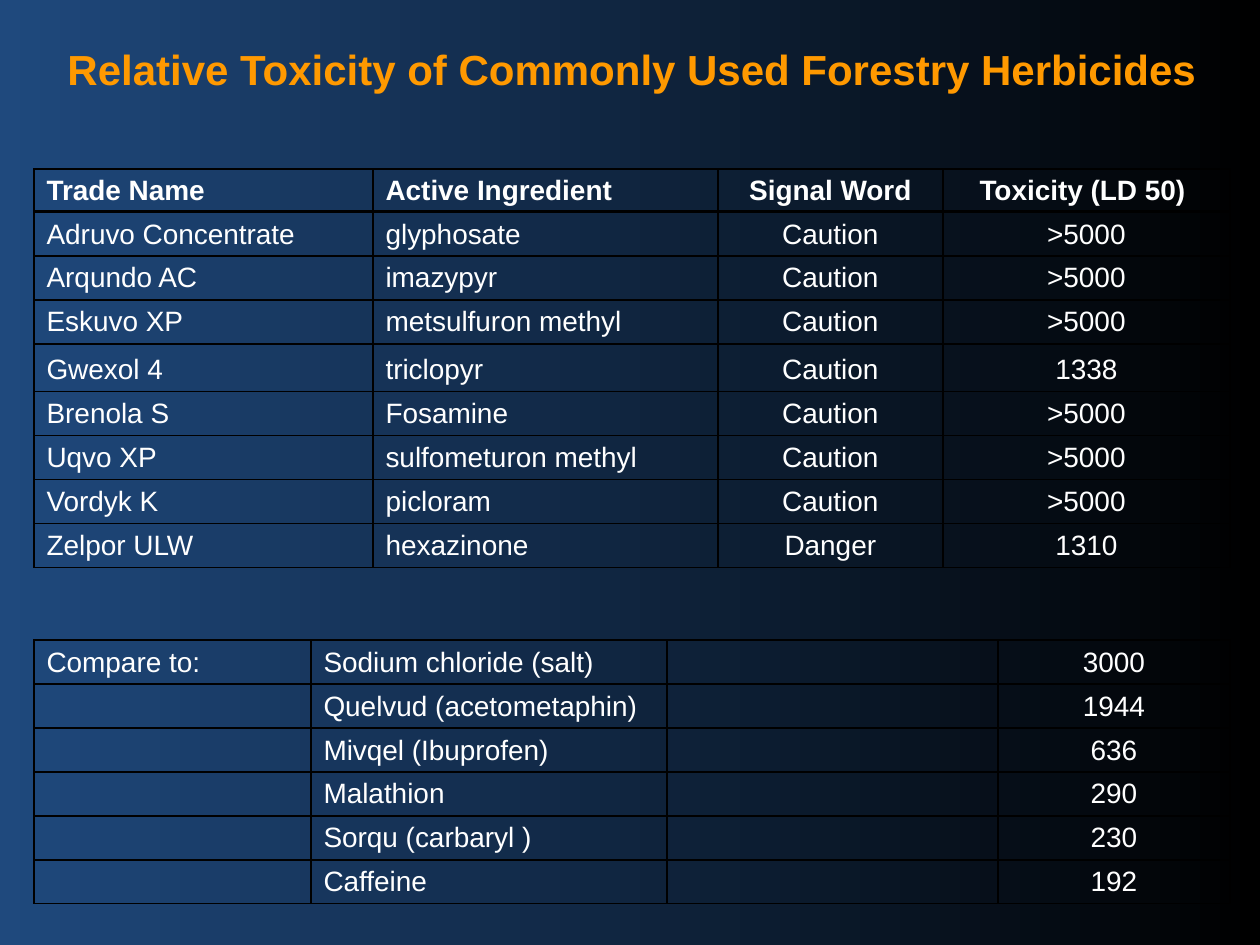
"""Build a slide with two tables on the toxicity of forestry herbicides."""
from lxml.etree import SubElement
from pptx import Presentation
from pptx.dml.color import RGBColor
from pptx.enum.text import MSO_ANCHOR, PP_ALIGN
from pptx.oxml.ns import qn
from pptx.util import Emu, Pt

PX = 914400 / 126
LEFT, WIDTH = 34, 1196
HERBICIDES = [
    ("Trade Name", "Active Ingredient", "Signal Word", "Toxicity (LD 50) "),
    ("Adruvo Concentrate", "glyphosate", "Caution", ">5000"),
    ("Arqundo AC", "imazypyr", "Caution", ">5000"),
    ("Eskuvo XP", "metsulfuron methyl", "Caution", ">5000"),
    ("Gwexol 4", "triclopyr", "Caution", "1338"),
    ("Brenola S", "Fosamine", "Caution", ">5000"),
    ("Uqvo XP", "sulfometuron methyl", "Caution", ">5000"),
    ("Vordyk K", "picloram", "Caution", ">5000"),
    ("Zelpor ULW", "hexazinone", "Danger", "1310"),
]
COMPARISONS = [
    ("Sodium chloride (salt)", "3000"),
    ("Quelvud (acetometaphin)", "1944"),
    ("Mivqel (Ibuprofen)", "636"),
    ("Malathion", "290"),
    ("Sorqu (carbaryl )", "230"),
    ("Caffeine", "192"),
]


def px(n):
    return Emu(round(n * PX))


def rgb(value):
    return RGBColor.from_string(value)


prs = Presentation()
prs.slide_width, prs.slide_height = px(1260), px(945)
s = prs.slides.add_slide(prs.slide_layouts[6])
bg = s.background.fill
bg.gradient()
bg.gradient_angle = 0
for stop, color, pos in zip(bg.gradient_stops, ("1F497D", "000000"), (0, 1)):
    stop.color.rgb = rgb(color)
    stop.position = pos

title_rows = [("Relative Toxicity of Commonly Used Forestry Herbicides", "", "", ""), ("",) * 4]
compare_rows = [("" if i else "Compare to:", name, "", dose)
                for i, (name, dose) in enumerate(COMPARISONS)]
tables = [
    (42, (339, 345, 225, 287), [58, 69, 43, 44, 44, 44, 48] + [44] * 4,
     title_rows + HERBICIDES, 2, (2, 3)),
    (640, (277, 356, 331, 232), [44] * 6, compare_rows, 0, (3,)),
]

for top, widths, heights, rows, first, centered in tables:
    frame = s.shapes.add_table(len(rows), 4, px(LEFT), px(top), px(WIDTH), px(sum(heights)))
    table = frame.table
    table.first_row = table.horz_banding = False
    for col, width in zip(table.columns, widths):
        col.width = px(width)
    for i, (row, height, texts) in enumerate(zip(table.rows, heights, rows)):
        row.height = px(height)
        is_title, is_header = first and i == 0, first and i == first
        for j, (cell, text) in enumerate(zip(row.cells, texts)):
            cell.margin_top = px(4)
            cell.margin_bottom = px(6)
            cell.vertical_anchor = MSO_ANCHOR.BOTTOM
            p = cell.text_frame.paragraphs[0]
            p.alignment = PP_ALIGN.CENTER if is_title or j in centered else PP_ALIGN.LEFT
            p.font.name = "Arial"
            p.font.size = Pt(24 if is_title else 16)
            p.font.bold = bool(is_title or is_header)
            p.font.color.rgb = rgb("FF9900" if is_title else "FFFFFF")
            if text:
                p.add_run().text = text
            else:
                SubElement(p._p, qn("a:endParaRPr"), sz="1600")
            tcPr = cell._tc.get_or_add_tcPr()
            for side in "LRTB":
                thick = is_header and side == "B" or first and i == first + 1 and side == "T"
                ln = SubElement(tcPr, qn(f"a:ln{side}"), w=str(Pt(2 if thick else 1)))
                if i >= first or (i == first - 1 and side == "B"):
                    fill = SubElement(ln, qn("a:solidFill"))
                    SubElement(fill, qn("a:srgbClr"), val="000000")
                else:
                    SubElement(ln, qn("a:noFill"))
            cell.fill.background()
    if first:
        table.cell(0, 0).merge(table.cell(0, 3))

prs.save("out.pptx")
